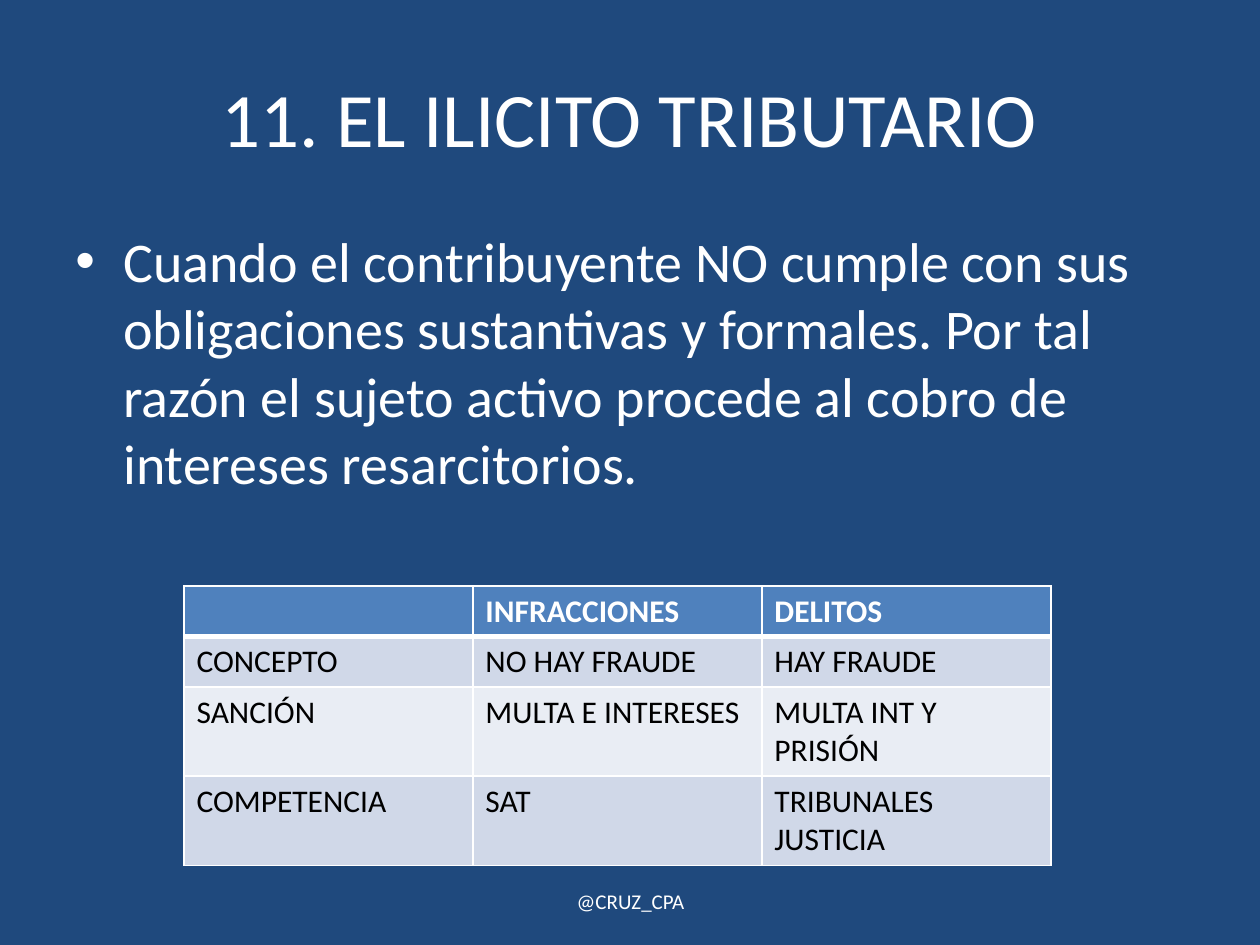
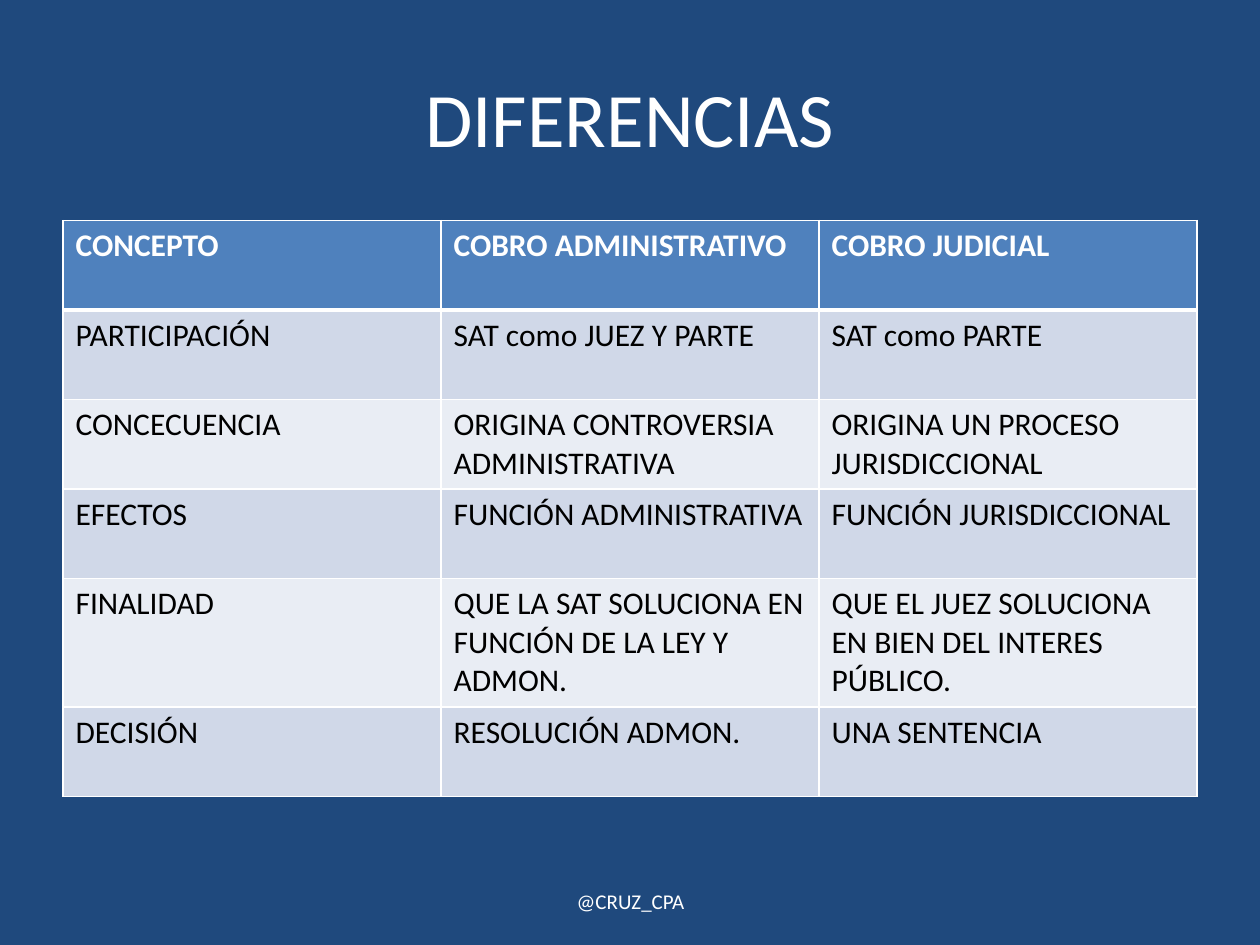
from lxml import etree
from pptx import Presentation
from pptx.dml.color import RGBColor
from pptx.enum.text import MSO_ANCHOR, PP_ALIGN
from pptx.oxml.ns import qn
from pptx.util import Inches, Pt

CENTER, MIDDLE = PP_ALIGN.CENTER, MSO_ANCHOR.MIDDLE
NAVY, WHITE, BLACK = "1F497D", "FFFFFF", "000000"
HEADER, BANDS = "4F81BD", ("D0D8E8", "E9EDF4")
FONT = "Calibri"
MARGIN, CONTENT_TOP, CONTENT_W = 0.5, 1.75, 9
ONE_LINE, TWO_LINES, THREE_LINES = 0.4, 0.71, 1.02

INTRO = ("Cuando el contribuyente NO cumple con sus obligaciones sustantivas y formales. "
         "Por tal razón el sujeto activo procede al cobro de intereses resarcitorios.")
OFFENCES = [
    ("", "INFRACCIONES", "DELITOS"),
    ("CONCEPTO", "NO HAY FRAUDE", "HAY FRAUDE"),
    ("SANCIÓN", "MULTA E INTERESES", "MULTA INT Y PRISIÓN"),
    ("COMPETENCIA", "SAT", "TRIBUNALES JUSTICIA"),
]
COLLECTION = [
    ("CONCEPTO", "COBRO ADMINISTRATIVO", "COBRO JUDICIAL"),
    ("PARTICIPACIÓN", "SAT como JUEZ Y PARTE", "SAT como PARTE"),
    ("CONCECUENCIA", "ORIGINA CONTROVERSIA ADMINISTRATIVA", "ORIGINA UN PROCESO JURISDICCIONAL"),
    ("EFECTOS", "FUNCIÓN ADMINISTRATIVA", "FUNCIÓN JURISDICCIONAL"),
    ("FINALIDAD", "QUE LA SAT SOLUCIONA EN FUNCIÓN DE LA LEY Y ADMON.",
     "QUE EL JUEZ SOLUCIONA EN BIEN DEL INTERES PÚBLICO."),
    ("DECISIÓN", "RESOLUCIÓN ADMON.", "UNA SENTENCIA"),
]
# title, intro, table rows, table left, top, width, row heights
SLIDES = [
    ("11. EL ILICITO TRIBUTARIO", INTRO, OFFENCES, 1.46, 4.65, 6.88,
     [ONE_LINE] * 2 + [TWO_LINES] * 2),
    ("DIFERENCIAS", None, COLLECTION, MARGIN, CONTENT_TOP, CONTENT_W,
     [TWO_LINES] * 4 + [THREE_LINES, TWO_LINES]),
]


def rgb(value):
    return RGBColor.from_string(value)


def write(tf, text, size, color=WHITE, bold=False, align=None):
    tf.text = text
    p = tf.paragraphs[0]
    p.alignment = align
    p.font.name, p.font.size, p.font.bold = FONT, Pt(size), bold
    p.font.color.rgb = rgb(color)
    return p


prs = Presentation()
prs.slide_width, prs.slide_height = Inches(10), Inches(7.5)
fill = prs.slide_master.background.fill
fill.solid()
fill.fore_color.rgb = rgb(NAVY)

for title, intro, rows, left, top, width, heights in SLIDES:
    s = prs.slides.add_slide(prs.slide_layouts[5])
    sp = s.shapes.title
    sp.left, sp.top, sp.width, sp.height = map(Inches, (MARGIN, 0.3, CONTENT_W, 1.25))
    sp.text_frame.vertical_anchor = MIDDLE
    write(sp.text_frame, title, 44, align=CENTER)

    if intro:
        sp = s.shapes.add_textbox(*map(Inches, (MARGIN, CONTENT_TOP, CONTENT_W, 4.95)))
        sp.text_frame.word_wrap = True
        p = write(sp.text_frame, intro, 32)
        p.space_before = Pt(6.4)
        pPr = p._p.get_or_add_pPr()
        pPr.set("marL", str(Inches(0.38)))
        pPr.set("indent", str(-Inches(0.38)))
        bullet_font = etree.Element(qn("a:buFont"), typeface="Arial")
        bullet = etree.Element(qn("a:buChar"), char="•")
        pPr.find(qn("a:spcBef")).addnext(bullet_font)
        bullet_font.addnext(bullet)

    frame = s.shapes.add_table(len(rows), len(rows[0]), *map(Inches, (left, top, width, sum(heights))))
    table = frame.table
    for r, (row, height) in enumerate(zip(rows, heights)):
        table.rows[r].height = Inches(height)
        is_header = r == 0
        for c, text in enumerate(row):
            cell = table.cell(r, c)
            write(cell.text_frame, text, 18, WHITE if is_header else BLACK, is_header)
            tcPr = cell._tc.get_or_add_tcPr()
            for side in "LRTB":
                thick = (is_header and side == "B") or (r == 1 and side == "T")
                ln = etree.SubElement(tcPr, qn(f"a:ln{side}"), w=str(Pt(3 if thick else 1)))
                line_fill = etree.SubElement(ln, qn("a:solidFill"))
                etree.SubElement(line_fill, qn("a:srgbClr"), val=WHITE)
            cell.fill.solid()
            cell.fill.fore_color.rgb = rgb(HEADER if is_header else BANDS[(r - 1) % 2])

    sp = s.shapes.add_textbox(*map(Inches, (3.42, 6.95, 3.17, 0.4)))
    sp.text_frame.word_wrap = True
    sp.text_frame.vertical_anchor = MIDDLE
    write(sp.text_frame, "@CRUZ_CPA", 12, align=CENTER)

prs.save("out.pptx")
